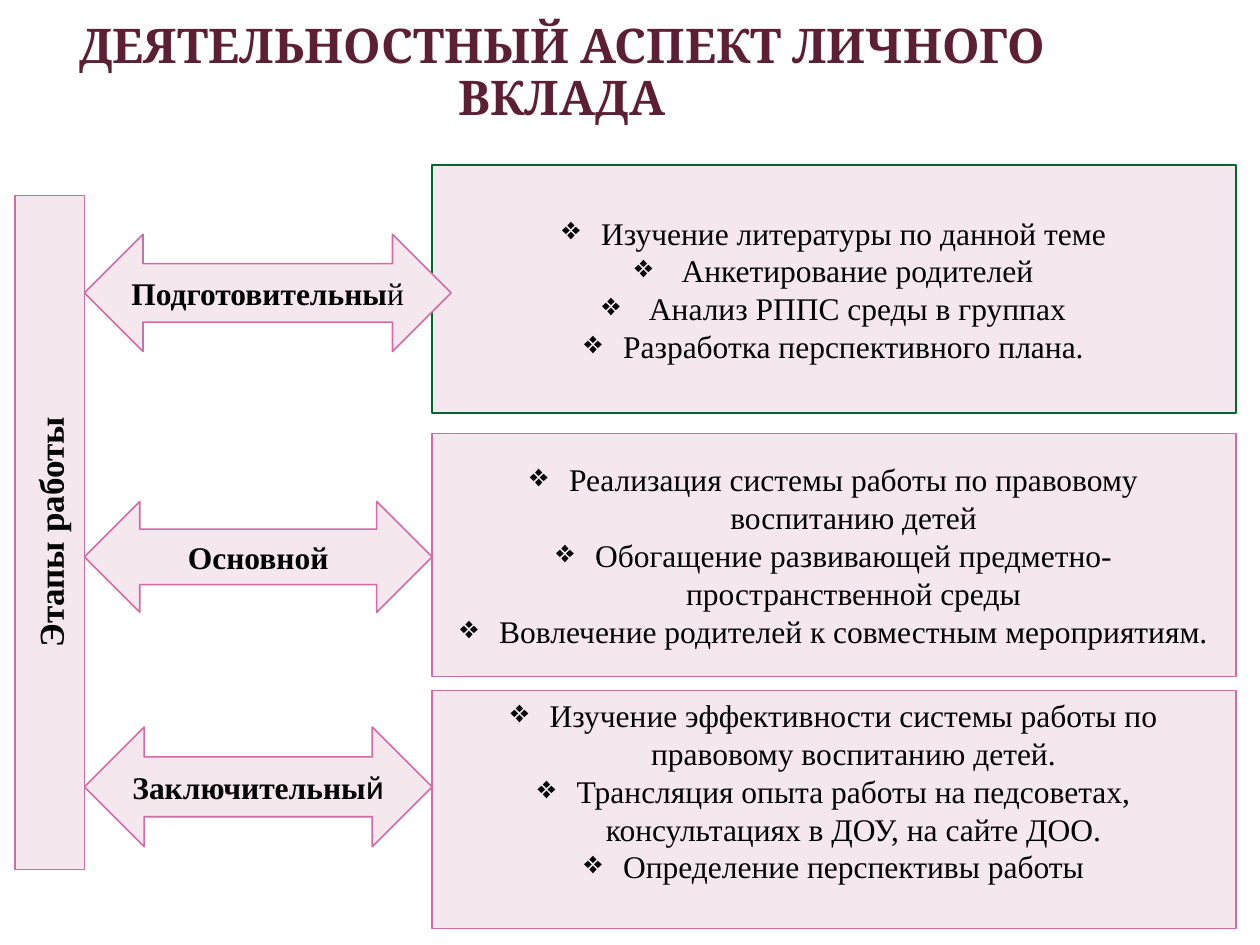
from dataclasses import dataclass

from lxml import etree
from pptx import Presentation, util as u
from pptx.dml.color import RGBColor
from pptx.enum import shapes, text
from pptx.oxml import ns


@dataclass(frozen=True)
class Theme:
    fill: str = "F4E7ED"
    pink: str = "CF6DA4"
    green: str = "00682D"
    title: str = "5C1F34"
    black: str = "000000"
    body_font: str = "Times New Roman"
    title_font: str = "Cambria"
    body_size: float = 18
    side_size: float = 20
    title_size: float = 27.3
    line_width: float = 0.9


@dataclass(frozen=True)
class Box:
    left: float
    top: float
    width: float
    height: float


@dataclass(frozen=True)
class Run:
    wording: str
    bold: bool = True
    font: str = Theme.body_font
    size: float = Theme.body_size
    color: str = Theme.black


@dataclass(frozen=True)
class Stage:
    label: tuple[Run, ...]
    arrow: Box
    panel: Box
    tasks: tuple[str, ...]
    outline: str = Theme.pink
    bottom_inset: float = 0.05


THEME = Theme()
SIDE = Box(0.12, 1.55, 0.55, 5.35)
ARROW_LEFT = SIDE.left + SIDE.width
PANEL_LEFT, PANEL_WIDTH = 3.43, 6.38
ARROW_WIDTH = PANEL_LEFT - ARROW_LEFT
BULLET_INDENT = 0.31

STAGES = (
    Stage(
        (Run("Подготовительны"), Run("й", bold=False)),
        Box(ARROW_LEFT, 1.86, ARROW_WIDTH + 0.15, 0.93),
        Box(PANEL_LEFT, 1.31, PANEL_WIDTH, 1.97),
        (
            "Изучение литературы по данной теме",
            " Анкетирование родителей",
            " Анализ РППС среды в группах",
            "Разработка перспективного плана.",
        ),
        outline=THEME.green,
    ),
    Stage(
        (Run("Основной"),),
        Box(ARROW_LEFT, 3.98, ARROW_WIDTH, 0.88),
        Box(PANEL_LEFT, 3.44, PANEL_WIDTH, 1.93),
        (
            "Реализация системы работы по правовому воспитанию детей",
            "Обогащение развивающей предметно-пространственной среды",
            "Вовлечение родителей к совместным мероприятиям.",
        ),
    ),
    Stage(
        (Run("Заключительны"), Run("й", bold=False, font="Roboto")),
        Box(ARROW_LEFT, 5.77, ARROW_WIDTH, 0.95),
        Box(PANEL_LEFT, 5.48, PANEL_WIDTH, 1.89),
        (
            "Изучение эффективности системы работы по правовому воспитанию детей.",
            "Трансляция опыта работы на педсоветах, консультациях в ДОУ, на сайте ДОО.",
            "Определение перспективы работы",
        ),
        bottom_inset=0.35,
    ),
)


def place(box: Box) -> tuple:
    """Return the box as four lengths."""
    return tuple(u.Inches(n) for n in (box.left, box.top, box.width, box.height))


def add_block(slide, kind, box: Box, outline: str = THEME.pink):
    """Add a filled, outlined shape ready for centred text."""
    shape = slide.shapes.add_shape(kind, *place(box))
    shape.shadow.inherit = False
    shape.fill.solid()
    shape.fill.fore_color.rgb = RGBColor.from_string(THEME.fill)
    shape.line.color.rgb = RGBColor.from_string(outline)
    shape.line.width = u.Pt(THEME.line_width)
    shape.text_frame.word_wrap = True
    shape.text_frame.vertical_anchor = text.MSO_ANCHOR.MIDDLE
    return shape


def write(paragraph, *runs: Run) -> None:
    """Fill a centred paragraph run by run."""
    paragraph.alignment = text.PP_ALIGN.CENTER
    for item in runs:
        run = paragraph.add_run()
        run.text = item.wording
        run.font.name = item.font
        run.font.size = u.Pt(item.size)
        run.font.bold = item.bold
        run.font.color.rgb = RGBColor.from_string(item.color)


def add_bullet(paragraph) -> None:
    """Give a paragraph a hanging diamond bullet."""
    properties = paragraph._p.get_or_add_pPr()
    properties.set("marL", str(u.Inches(BULLET_INDENT)))
    properties.set("indent", str(-u.Inches(BULLET_INDENT)))
    etree.SubElement(properties, ns.qn("a:buChar")).set("char", "❖")


def add_panel(slide, stage: Stage) -> None:
    """Draw the task list of a stage."""
    panel = add_block(slide, shapes.MSO_SHAPE.RECTANGLE, stage.panel, stage.outline)
    frame = panel.text_frame
    frame.margin_bottom = u.Inches(stage.bottom_inset)
    for index, task in enumerate(stage.tasks):
        paragraph = frame.add_paragraph() if index else frame.paragraphs[0]
        add_bullet(paragraph)
        write(paragraph, Run(task, bold=False))


def add_arrow(slide, stage: Stage) -> None:
    """Draw the labelled arrow of a stage."""
    arrow = add_block(slide, shapes.MSO_SHAPE.LEFT_RIGHT_ARROW, stage.arrow)
    write(arrow.text_frame.paragraphs[0], *stage.label)


def add_side(slide) -> None:
    """Draw the vertical heading of the stages."""
    side = add_block(slide, shapes.MSO_SHAPE.RECTANGLE, SIDE)
    side.text_frame._txBody.bodyPr.set("vert", "vert270")
    write(side.text_frame.paragraphs[0], Run("Этапы работы", size=THEME.side_size))


def add_title(slide) -> None:
    """Write the slide title."""
    frame = slide.shapes.add_textbox(*place(Box(0.5, 0.13, 7.92, 1.02))).text_frame
    frame.word_wrap = True
    paragraph = frame.paragraphs[0]
    paragraph.line_spacing = 0.9
    write(paragraph, Run("ДЕЯТЕЛЬНОСТНЫЙ АСПЕКТ ЛИЧНОГО ВКЛАДА", font=THEME.title_font,
                         size=THEME.title_size, color=THEME.title))


def main() -> None:
    """Build and save the slide."""
    presentation = Presentation()
    presentation.slide_width, presentation.slide_height = u.Inches(10), u.Inches(7.5)
    slide = presentation.slides.add_slide(presentation.slide_layouts[6])
    for stage in STAGES:
        add_panel(slide, stage)
    for stage in STAGES:
        add_arrow(slide, stage)
    add_side(slide)
    add_title(slide)
    presentation.save("out.pptx")


if __name__ == "__main__":
    main()
